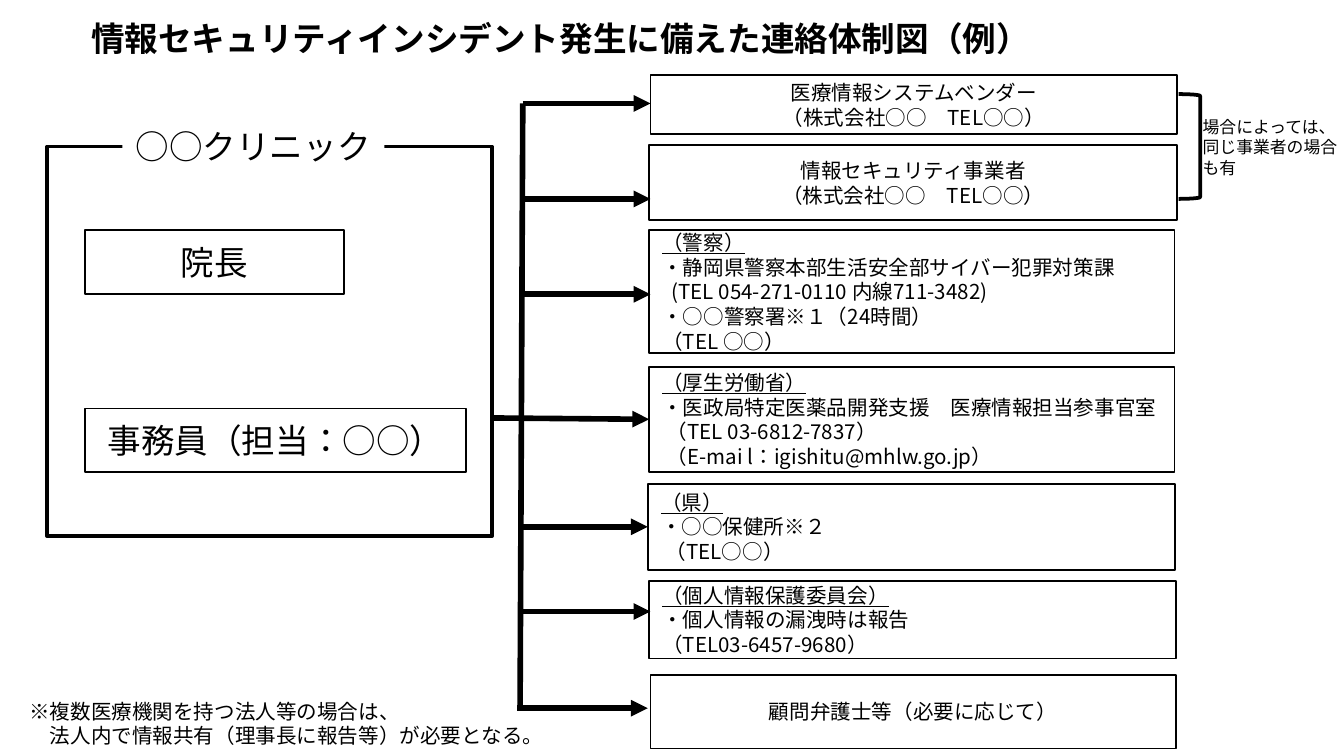
import pptx
import pptx.dml.color
import pptx.enum.lang
import pptx.enum.shapes
import pptx.enum.text
import pptx.oxml.ns
import pptx.util
from lxml import etree

Inches, Pt = pptx.util.Inches, pptx.util.Pt
SHAPE = pptx.enum.shapes.MSO_SHAPE
ALIGN = pptx.enum.text.PP_ALIGN
ANCHOR = pptx.enum.text.MSO_ANCHOR
JAPANESE = pptx.enum.lang.MSO_LANGUAGE_ID.JAPANESE
BLACK = pptx.dml.color.RGBColor(0, 0, 0)
WHITE = pptx.dml.color.RGBColor(255, 255, 255)
FONT = "Noto Sans CJK JP"

TITLE = "情報セキュリティインシデント発生に備えた連絡体制図（例）"
CLINIC = "○○クリニック"
# (text, left, top, width, height)
STAFF = [
    ("院長", 0.63, 1.71, 1.93, 0.48),
    ("事務員（担当：○○）", 0.63, 3.04, 2.84, 0.47),
]
# (left, top, width, height, has underlined heading, lines)
CONTACTS = [
    (4.84, 0.56, 3.92, 0.44, False, [
        "医療情報システムベンダー", "（株式会社○○　TEL○○）"]),
    (4.83, 1.08, 3.93, 0.56, False, [
        "情報セキュリティ事業者", "（株式会社○○　TEL○○）"]),
    (4.83, 1.71, 3.91, 0.92, True, [
        "（警察）", "・静岡県警察本部生活安全部サイバー犯罪対策課",
        "  (TEL 054-271-0110 内線711-3482)",
        "・○○警察署※１（24時間）\v（TEL ○○）"]),
    (4.83, 2.73, 3.91, 0.78, True, [
        "（厚生労働省）", "・医政局特定医薬品開発支援　医療情報担当参事官室",
        " （TEL 03-6812-7837）", " （E-mai l：igishitu@mhlw.go.jp）"]),
    (4.82, 3.6, 3.92, 0.64, True, ["（県）", "・○○保健所※２", " （TEL○○）"]),
    (4.83, 4.32, 3.92, 0.58, True, [
        "（個人情報保護委員会）", "・個人情報の漏洩時は報告", "（TEL03-6457-9680）"]),
    (4.84, 5.02, 3.91, 0.55, False, ["顧問弁護士等（必要に応じて）"]),
]
FOOTNOTE = ["※複数医療機関を持つ法人等の場合は、",
            "　法人内で情報共有（理事長に報告等）が必要となる。"]
BRACKET_NOTE = "場合によっては、同じ事業者の場合も有"

CLINIC_BOX = (0.35, 1.09, 3.31, 2.9)
TRUNK_TOP, TRUNK_BOTTOM = (3.89, 0.77), (3.87, 5.26)
# (start, end) of each arrow
ARROWS = [((3.66, 3.11), (4.83, 3.12))] + [
    ((start, y), (end, y)) for start, end, y in [
        (3.89, 4.84, 0.77), (3.88, 4.84, 1.48), (3.87, 4.84, 2.19),
        (3.87, 4.82, 3.92), (3.86, 4.84, 4.55), (3.85, 4.82, 5.27)]]

presentation = pptx.Presentation()
presentation.slide_width = Inches(10)
presentation.slide_height = Inches(10 * 9 / 16)
slide = presentation.slides.add_slide(presentation.slide_layouts[6])


def write(shape, lines, size, align=ALIGN.LEFT, anchor=ANCHOR.TOP, font=FONT,
          bold=False, heading=False):
    """Fill a shape with lines; heading underlines the first of them."""
    frame = shape.text_frame
    frame.word_wrap = True
    frame.vertical_anchor = anchor
    frame.text = "\n".join(lines)
    for index, paragraph in enumerate(frame.paragraphs):
        paragraph.alignment = align
        for run in paragraph.runs:
            run.font.size, run.font.name = Pt(size), font
            run.font.bold = bold
            run.font.color.rgb = BLACK
            run.font.underline = heading and index == 0
            run.font.language_id = JAPANESE
            east_asian = etree.SubElement(
                run.font._element, pptx.oxml.ns.qn("a:ea"))
            east_asian.set("typeface", font)


def add_outline(left, top, width, height, weight=1, kind=SHAPE.RECTANGLE):
    shape = slide.shapes.add_shape(
        kind, Inches(left), Inches(top), Inches(width), Inches(height))
    shape.shadow.inherit = False
    shape.fill.background()
    shape.line.color.rgb = BLACK
    shape.line.width = Pt(weight)
    return shape


def add_text_box(left, top, width, height):
    return slide.shapes.add_textbox(
        Inches(left), Inches(top), Inches(width), Inches(height))


def add_line(start, end, arrow=False):
    line = slide.shapes.add_connector(
        pptx.enum.shapes.MSO_CONNECTOR.STRAIGHT,
        *(Inches(value) for value in start + end))
    line.line.color.rgb = BLACK
    line.line.width = Pt(3)
    if arrow:
        tail = etree.SubElement(
            line.line._get_or_add_ln(), pptx.oxml.ns.qn("a:tailEnd"))
        tail.set("type", "triangle")
    etree.SubElement(line._element.spPr, pptx.oxml.ns.qn("a:effectLst"))


write(add_text_box(0.23, 0, 7.88, 0.56), [TITLE], 18, ALIGN.CENTER,
      ANCHOR.MIDDLE, font="Arial", bold=True)

add_outline(*CLINIC_BOX, weight=2)
clinic_label = add_text_box(0.91, 0.89, 1.95, 0.4)
clinic_label.fill.solid()
clinic_label.fill.fore_color.rgb = WHITE
write(clinic_label, [CLINIC], 18)
for text, *box in STAFF:
    write(add_outline(*box), [text], 18, ALIGN.CENTER, ANCHOR.MIDDLE)

for *box, heading, lines in CONTACTS:
    write(add_outline(*box), lines, 11,
          ALIGN.LEFT if heading else ALIGN.CENTER, ANCHOR.MIDDLE,
          heading=heading)

add_line(TRUNK_TOP, TRUNK_BOTTOM)
for start, end in ARROWS:
    add_line(start, end, arrow=True)

add_outline(8.77, 0.7, 0.16, 0.78, weight=2, kind=SHAPE.RIGHT_BRACKET)
bracket_note = add_text_box(8.85, 0.82, 1.15, 0.55)
bracket_note.text_frame.margin_right = 0
write(bracket_note, [BRACKET_NOTE], 9)
write(add_text_box(0.12, 5.15, 3.93, 0.47), FOOTNOTE, 11)

presentation.save("out.pptx")
